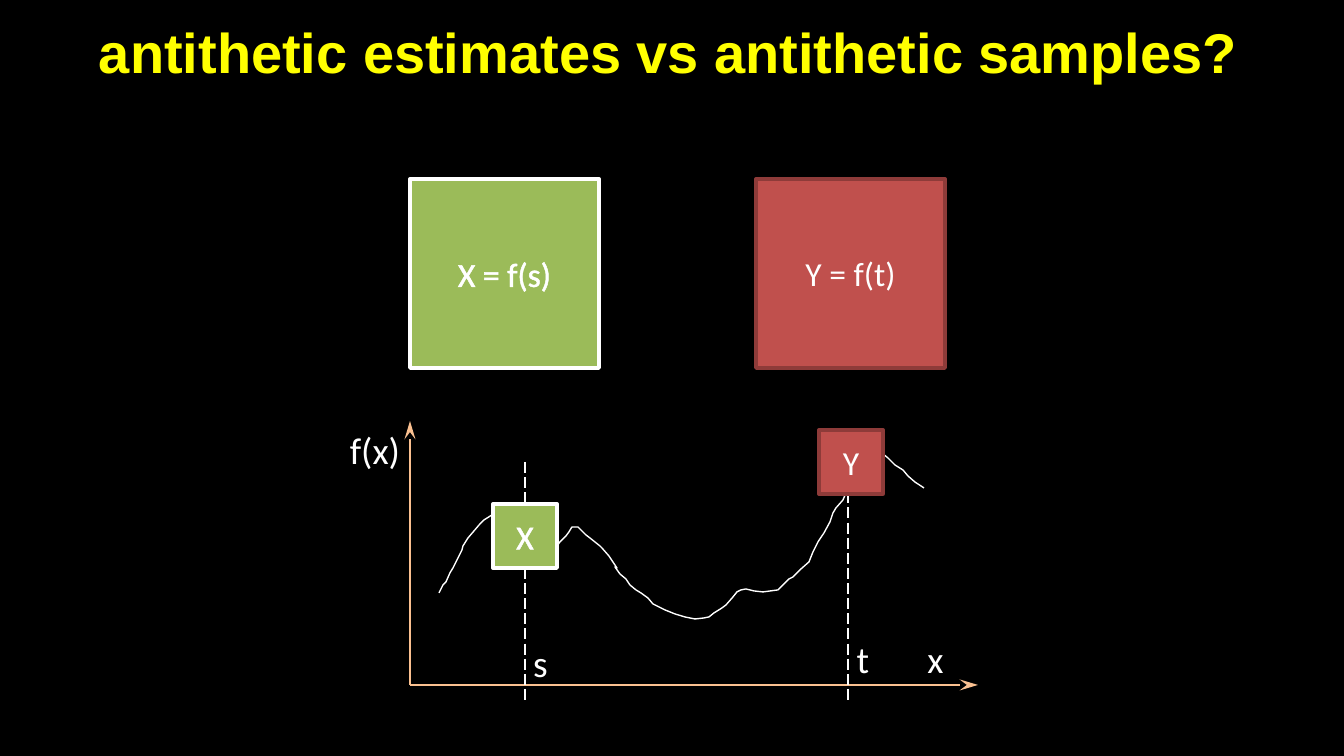
from dataclasses import dataclass

from lxml.etree import SubElement
from pptx import Presentation
from pptx.dml.color import RGBColor
from pptx.enum.dml import MSO_LINE
from pptx.enum.shapes import MSO_CONNECTOR, MSO_SHAPE
from pptx.enum.text import MSO_ANCHOR, PP_ALIGN
from pptx.oxml.ns import qn
from pptx.util import Emu, Pt

PX = 9144000 / 1344  # EMU per px
COLORS = {
    "background": "000000", "title": "FFFF00", "white": "FFFFFF",
    "axis": "FAC090", "green": "9BBB59", "red": "C0504D", "dark_red": "8E3B39",
}


@dataclass(frozen=True)
class Estimate:
    text: str
    left: int
    top: int
    size: int
    fill: str
    border: str
    outlined: bool = False


@dataclass(frozen=True)
class Label:
    text: str
    left: int
    top: int
    width: int
    height: int = 59
    points: int = 20
    font: str = "Calibri"
    color: str = "white"
    bold: bool = False


@dataclass(frozen=True)
class Line:
    start: tuple[int, int]
    end: tuple[int, int]
    color: str
    arrow: bool = False


TITLE = Label("antithetic estimates vs antithetic samples?", 55, 13, 1227, 77,
              30, "Arial", "title", True)

BIG, SMALL = 189, 64
FORMULAS = [
    Estimate("X = f(s)", 410, 179, BIG, "green", "white", True),
    Estimate("Y = f(t)", 756, 179, BIG, "red", "dark_red"),
]
SAMPLES = [
    Estimate("X", 493, 504, SMALL, "green", "white", True),
    Estimate("Y", 819, 430, SMALL, "red", "dark_red"),
]

ORIGIN = (410, 685)
AXES = [
    Line(ORIGIN, (410, 421), "axis", True),
    Line(ORIGIN, (978, 685), "axis", True),
]
SAMPLE_LINES = [Line((x, 462), (x, 703), "white") for x in (525, 848)]
LABELS = [
    Label("x", 914, 630, 43), Label("f(x)", 336, 421, 78),
    Label("s", 519, 634, 43), Label("t", 843, 630, 40),
]

CURVE = [
    (439, 593), (443, 585), (446, 582), (450, 573), (453, 568), (457, 560),
    (462, 550), (463, 546), (468, 538), (474, 531), (480, 524), (484, 520),
    (492, 515), (499, 509), (503, 511), (511, 519), (516, 525), (520, 535),
    (524, 542), (528, 550), (531, 556), (539, 558), (543, 557), (555, 549),
    (560, 542), (566, 536), (569, 532), (572, 527), (578, 527), (586, 535),
    (590, 538), (600, 546), (602, 548), (609, 556), (617, 568), (615, 567),
    (620, 574), (626, 579), (630, 585), (636, 590), (641, 593), (648, 598),
    (653, 604), (665, 610), (675, 614), (685, 617), (695, 619), (704, 618),
    (709, 617), (714, 613), (722, 608), (726, 605), (733, 597), (737, 592),
    (741, 590), (746, 589), (754, 591), (763, 592), (778, 590), (782, 586),
    (789, 579), (793, 577), (801, 569), (809, 562), (813, 552), (818, 542),
    (824, 533), (830, 522), (833, 513), (836, 508), (843, 500), (849, 486),
    (857, 477), (867, 466), (875, 457), (882, 453), (888, 458), (895, 465),
    (903, 470), (908, 476), (915, 482), (924, 488),
]


def px(*lengths: int) -> list[Emu]:
    return [Emu(round(length * PX)) for length in lengths]


def rgb(name: str) -> RGBColor:
    return RGBColor.from_string(COLORS[name])


def add_run(frame, text: str, points: int, font: str, color: str, bold=False):
    paragraph = frame.paragraphs[0]
    paragraph.alignment = PP_ALIGN.CENTER
    run = paragraph.add_run()
    run.text = text
    run.font.size = Pt(points)
    run.font.name = font
    run.font.bold = bold
    run.font.color.rgb = rgb(color)
    return run


def outline_text(run, color: str) -> None:
    properties = run.font._element
    outline = SubElement(properties, qn("a:ln"), w=str(Pt(0.75)))
    fill = SubElement(outline, qn("a:solidFill"))
    SubElement(fill, qn("a:srgbClr"), val=COLORS[color])
    properties.insert(0, outline)


def draw_estimate(slide, estimate: Estimate) -> None:
    square = slide.shapes.add_shape(
        MSO_SHAPE.RECTANGLE,
        *px(estimate.left, estimate.top, estimate.size, estimate.size))
    square.shadow.inherit = False
    square.fill.solid()
    square.fill.fore_color.rgb = rgb(estimate.fill)
    square.line.color.rgb = rgb(estimate.border)
    square.line.width = Pt(2)
    square.text_frame.vertical_anchor = MSO_ANCHOR.MIDDLE
    run = add_run(square.text_frame, estimate.text, 18, "Calibri", "white")
    if estimate.outlined:
        outline_text(run, "white")


def draw_label(slide, label: Label, wrap: bool = False) -> None:
    box = slide.shapes.add_textbox(
        *px(label.left, label.top, label.width, label.height))
    frame = box.text_frame
    frame.word_wrap = wrap
    frame.vertical_anchor = MSO_ANCHOR.MIDDLE if wrap else MSO_ANCHOR.TOP
    add_run(frame, label.text, label.points, label.font, label.color, label.bold)


def draw_line(slide, line: Line) -> None:
    connector = slide.shapes.add_connector(
        MSO_CONNECTOR.STRAIGHT, *px(*line.start, *line.end))
    connector.line.color.rgb = rgb(line.color)
    connector.line.width = Pt(0.75)
    if line.arrow:
        SubElement(connector.line._get_or_add_ln(), qn("a:tailEnd"),
                   type="stealth", w="med", len="lg")
    else:
        connector.line.dash_style = MSO_LINE.LONG_DASH
    SubElement(connector._element.spPr, qn("a:effectLst"))


def draw_curve(slide, points: list[tuple[int, int]]) -> None:
    builder = slide.shapes.build_freeform(*points[0], scale=PX)
    builder.add_line_segments(points[1:], close=False)
    curve = builder.convert_to_shape()
    curve.shadow.inherit = False
    curve.fill.background()
    curve.line.color.rgb = rgb("white")
    curve.line.width = Pt(0.75)


def main() -> None:
    presentation = Presentation()
    presentation.slide_width, presentation.slide_height = px(1344, 756)
    slide = presentation.slides.add_slide(presentation.slide_layouts[6])
    slide.background.fill.solid()
    slide.background.fill.fore_color.rgb = rgb("background")

    # Title and the two estimates
    draw_label(slide, TITLE, wrap=True)
    for formula in FORMULAS:
        draw_estimate(slide, formula)

    # Graph of f with its axes
    for axis in AXES:
        draw_line(slide, axis)
    draw_curve(slide, CURVE)

    # Sample positions, labels and sampled values
    for sample_line in SAMPLE_LINES:
        draw_line(slide, sample_line)
    for label in LABELS:
        draw_label(slide, label)
    for sample in SAMPLES:
        draw_estimate(slide, sample)

    presentation.save("out.pptx")


if __name__ == "__main__":
    main()
